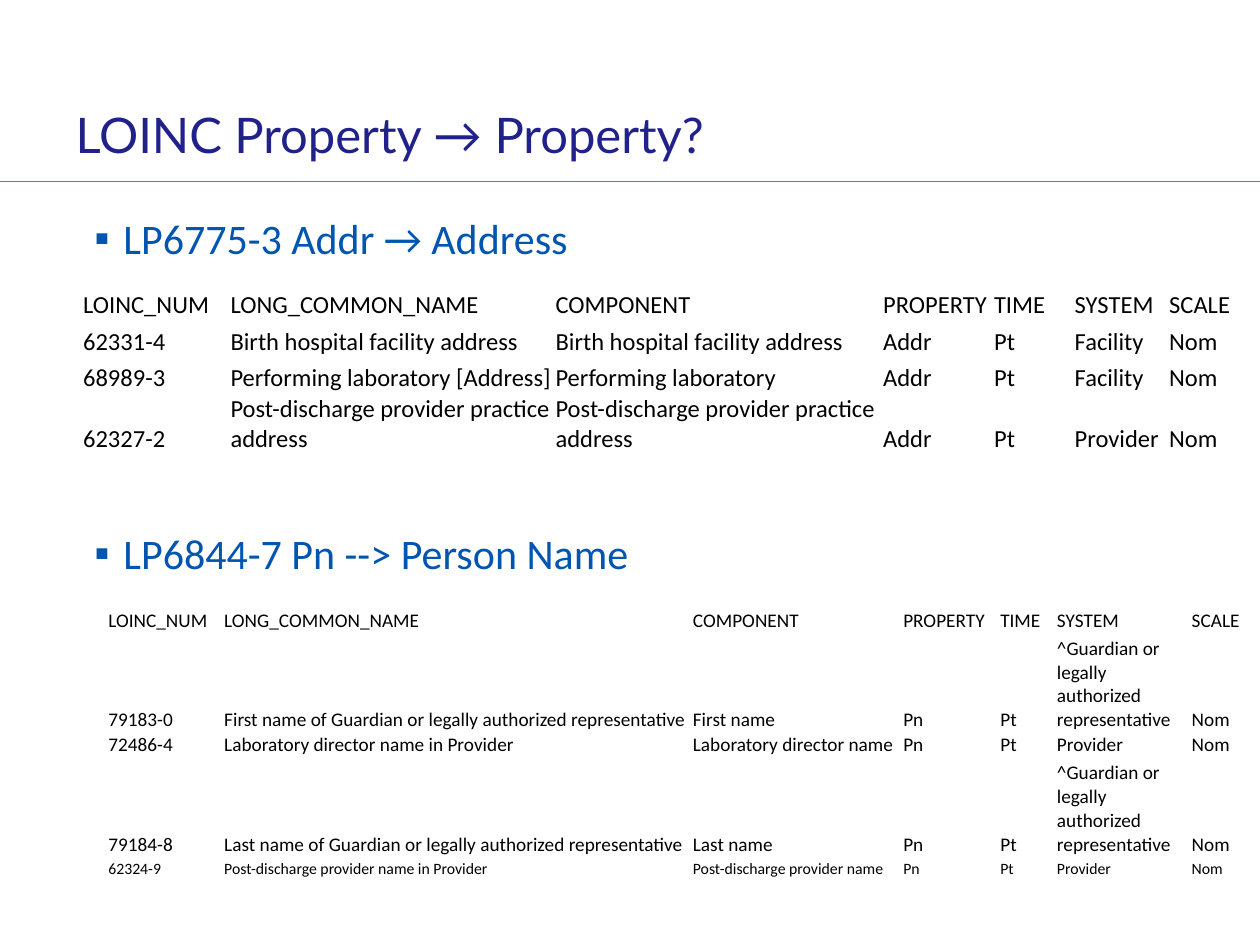
import pptx
import pptx.dml.color
import pptx.enum.shapes
import pptx.enum.text
import pptx.oxml
import pptx.oxml.ns
import pptx.util

Inches = pptx.util.Inches
Pt = pptx.util.Pt
RGBColor = pptx.dml.color.RGBColor
MSO_ANCHOR = pptx.enum.text.MSO_ANCHOR

NAVY = RGBColor(0x21, 0x21, 0x8A)
BLUE = RGBColor(0x00, 0x55, 0xB0)
TEAL = RGBColor(0x22, 0x9B, 0xB8)
BLACK = RGBColor(0x00, 0x00, 0x00)

HEADER = ["LOINC_NUM", "LONG_COMMON_NAME", "COMPONENT", "PROPERTY", "TIME", "SYSTEM", "SCALE"]
GUARDIAN = "^Guardian or legally authorized representative"
ADDRESS_ROWS = [
    HEADER,
    ["62331-4", "Birth hospital facility address", "Birth hospital facility address",
     "Addr", "Pt", "Facility", "Nom"],
    ["68989-3", "Performing laboratory [Address]", "Performing laboratory",
     "Addr", "Pt", "Facility", "Nom"],
    ["62327-2", "Post-discharge provider practice address",
     "Post-discharge provider practice address", "Addr", "Pt", "Provider", "Nom"],
]
NAME_ROWS = [
    HEADER,
    ["79183-0", "First name of Guardian or legally authorized representative",
     "First name", "Pn", "Pt", GUARDIAN, "Nom"],
    ["72486-4", "Laboratory director name in Provider", "Laboratory director name",
     "Pn", "Pt", "Provider", "Nom"],
    ["79184-8", "Last name of Guardian or legally authorized representative",
     "Last name", "Pn", "Pt", GUARDIAN, "Nom"],
    ["62324-9", "Post-discharge provider name in Provider", "Post-discharge provider name",
     "Pn", "Pt", "Provider", "Nom"],
]


def format_font(font, name, size, color):
    font.name = name
    font.size = Pt(size)
    font.color.rgb = color


def place(shape, left, top, width, height, anchor):
    shape.left, shape.top = Inches(left), Inches(top)
    shape.width, shape.height = Inches(width), Inches(height)
    frame = shape.text_frame
    frame.auto_size = pptx.enum.text.MSO_AUTO_SIZE.NONE
    frame.word_wrap = True
    frame.vertical_anchor = anchor
    frame.margin_left = frame.margin_right = Inches(0.1)
    frame.margin_top = frame.margin_bottom = Inches(0.1)


def fill_title(shape, text):
    place(shape, 0.5, 0.78, 7.21, 0.56, MSO_ANCHOR.MIDDLE)
    shape.text_frame.text = text
    paragraph = shape.text_frame.paragraphs[0]
    paragraph.alignment = pptx.enum.text.PP_ALIGN.LEFT
    format_font(paragraph.runs[0].font, "Lato", 28, NAVY)


def add_bullet(paragraph):
    properties = paragraph._p.get_or_add_pPr()
    properties.set("marL", str(Inches(0.38)))
    properties.set("indent", str(Inches(-0.23)))
    namespace = pptx.oxml.ns.nsdecls("a")
    for xml in (
        f'<a:buClr {namespace}><a:srgbClr val="{BLUE}"/></a:buClr>',
        f'<a:buFont {namespace} typeface="Calibri"/>',
        f'<a:buChar {namespace} char="▪"/>',
    ):
        properties.append(pptx.oxml.parse_xml(xml))


def fill_body(shape, headings, gap):
    place(shape, 0.5, 1.59, 9, 5.09, MSO_ANCHOR.TOP)
    shape.text_frame.text = "\n".join(headings)
    for index, paragraph in enumerate(shape.text_frame.paragraphs):
        paragraph.space_before = Pt(gap if index else 0)
        paragraph.space_after = Pt(1)
        add_bullet(paragraph)
        format_font(paragraph.runs[0].font, "Calibri", 24, BLUE)


def add_rule(slide, top):
    line = slide.shapes.add_connector(
        pptx.enum.shapes.MSO_CONNECTOR.STRAIGHT, 0, Inches(top), Inches(10), Inches(top))
    line.line.color.rgb = TEAL
    line.line.width = Pt(0.75)
    line._element.spPr.append(
        pptx.oxml.parse_xml(f'<a:effectLst {pptx.oxml.ns.nsdecls("a")}/>'))


def fill_cell(cell, text, size):
    cell.fill.background()
    cell.vertical_anchor = MSO_ANCHOR.BOTTOM
    cell.margin_left = cell.margin_right = cell.margin_top = Inches(0.01)
    cell.margin_bottom = 0
    cell.text_frame.text = text
    format_font(cell.text_frame.paragraphs[0].runs[0].font, "Calibri", size, BLACK)


def add_loinc_table(slide, left, top, widths, heights, rows, sizes):
    table = slide.shapes.add_table(
        len(rows), len(widths), Inches(left), Inches(top),
        Inches(sum(widths)), Inches(sum(heights))).table
    table.first_row = False
    table.horz_banding = False
    for column, width in zip(table.columns, widths):
        column.width = Inches(width)
    for row, height, texts, size in zip(table.rows, heights, rows, sizes):
        row.height = Inches(height)
        for cell, text in zip(row.cells, texts):
            fill_cell(cell, text, size)


def main():
    presentation = pptx.Presentation()
    presentation.slide_width = Inches(10)
    presentation.slide_height = Inches(7.5)
    slide = presentation.slides.add_slide(presentation.slide_layouts[1])
    add_rule(slide, 1.44)
    fill_body(slide.placeholders[1],
              ["LP6775-3 Addr → Address", "LP6844-7 Pn --> Person Name"], 150)
    fill_title(slide.shapes.title, "LOINC Property → Property?")
    add_loinc_table(slide, 0.65, 2.25, [1.17, 2.58, 2.6, 0.88, 0.64, 0.75, 0.59],
                    [0.29] * 4, ADDRESS_ROWS, [14] * 4)
    add_loinc_table(slide, 0.85, 4.82, [0.92, 3.72, 1.67, 0.77, 0.45, 1.07, 0.45],
                    [0.18, 0.79, 0.18, 0.79, 0.18], NAME_ROWS, [11] * 4 + [9])
    presentation.save("out.pptx")


if __name__ == "__main__":
    main()
